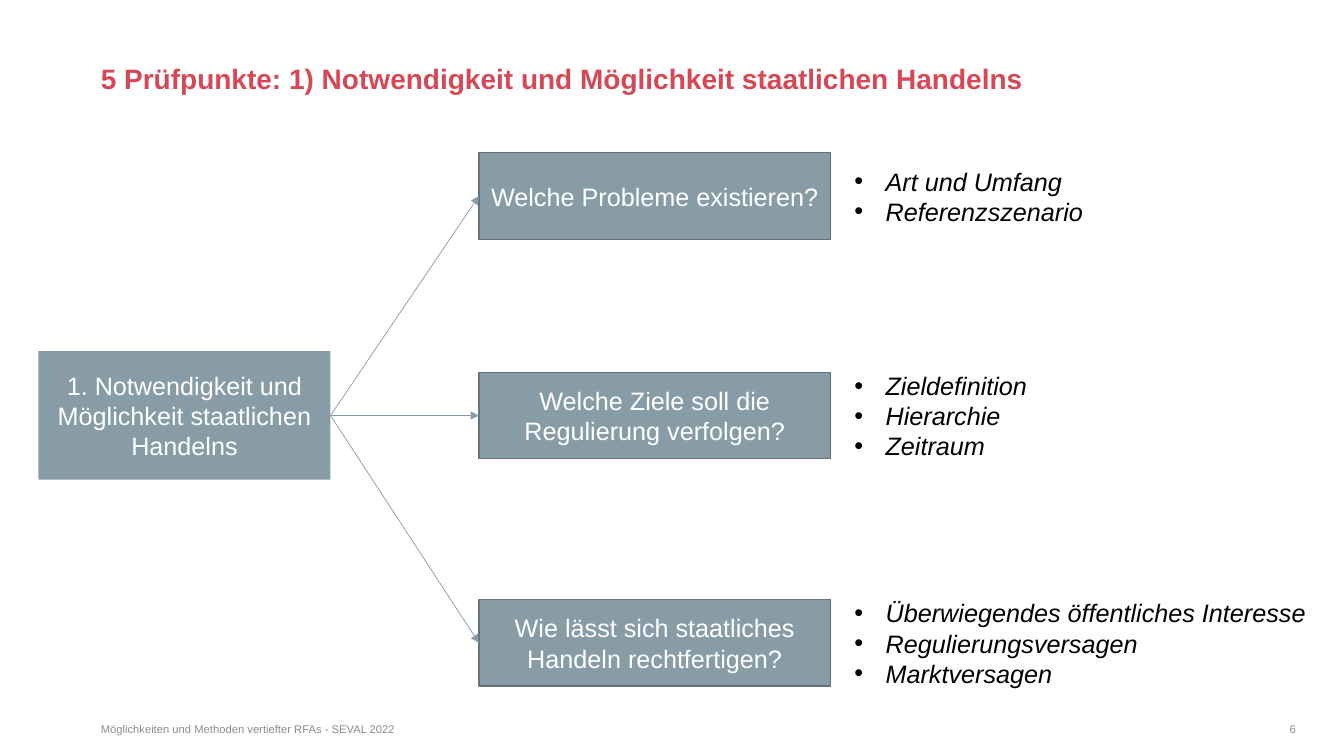
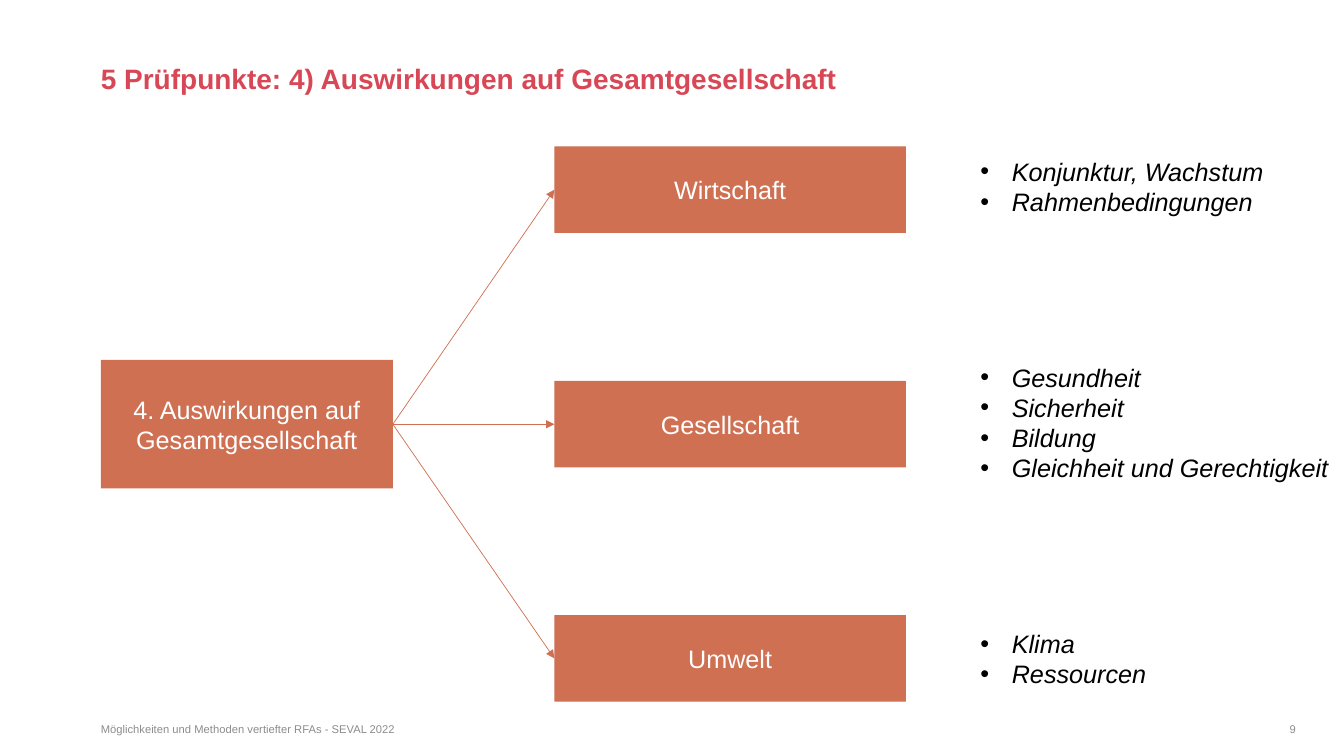
from lxml import etree
from pptx import Presentation
from pptx.dml.color import RGBColor
from pptx.enum import shapes, text
from pptx.oxml import ns
from pptx.util import Cm, Pt

FONT = "Arial"
RED, GREY, WHITE, BLACK = "D84755", "8C8C8C", "FFFFFF", "000000"
SLATE, EDGE, RUST = "879CA6", "64737B", "CF7053"
WIDE, HIGH = 33.87, 19.05
LEFT, RIGHT = 2.54, 32.66
FOOTER = "Möglichkeiten und Methoden vertiefter RFAs - SEVAL 2022"
ROOT = 7.36, 3.24
BOX = 8.86, 2.18
LINE, PAD, DENT = 0.76, 0.25, 0.79


def color(code):
    """Turn a hex string into a colour."""
    return RGBColor.from_string(code)


def child(parent, tag, **attrs):
    """Append a drawing element to its parent."""
    return etree.SubElement(parent, ns.qn(tag), attrs)


def dot(para):
    """Give a paragraph a hanging round bullet."""
    props = para._p.get_or_add_pPr()
    props.set("marL", str(Cm(DENT)))
    props.set("indent", str(-Cm(DENT)))
    child(props, "a:buFont", typeface=FONT)
    child(props, "a:buChar", char="•")


def write(frame, lines, size=18, ink=BLACK, bold=False, slant=False,
          align="LEFT", anchor="TOP", space=1.0, inset=PAD, bullet=False):
    """Fill a text frame with formatted lines."""
    frame.word_wrap = True
    frame.vertical_anchor = getattr(text.MSO_ANCHOR, anchor)
    frame.margin_left = frame.margin_right = Cm(inset)
    frame.margin_top = frame.margin_bottom = Cm(inset / 2)
    for i, line in enumerate(lines):
        para = frame.add_paragraph() if i else frame.paragraphs[0]
        if bullet:
            dot(para)
        para.alignment = getattr(text.PP_ALIGN, align)
        para.line_spacing = space
        run = para.add_run()
        run.text = line
        font = run.font
        font.name, font.size = FONT, Pt(size)
        font.bold, font.italic = bold, slant
        font.color.rgb = color(ink)


def label(slide, left, top, width, height, lines, **style):
    """Add a text box."""
    area = slide.shapes.add_textbox(Cm(left), Cm(top), Cm(width), Cm(height))
    write(area.text_frame, lines, **style)


def box(slide, left, mid, size, words, fill, edge=None):
    """Add a filled box centred on a height."""
    width, height = size
    shape = slide.shapes.add_shape(
        shapes.MSO_SHAPE.RECTANGLE, Cm(left), Cm(mid - height / 2),
        Cm(width), Cm(height))
    shape.shadow.inherit = False
    shape.fill.solid()
    shape.fill.fore_color.rgb = color(fill)
    if edge:
        shape.line.color.rgb = color(edge)
        shape.line.width = Pt(1)
    else:
        shape.line.fill.background()
    write(shape.text_frame, [words], ink=WHITE, align="CENTER",
          anchor="MIDDLE")
    return shape


def arrow(slide, start, end, ink):
    """Link the right side of one box to the left side of another."""
    link = slide.shapes.add_connector(
        shapes.MSO_CONNECTOR.STRAIGHT, 0, 0, 0, 0)
    link.begin_connect(start, 3)
    link.end_connect(end, 1)
    link.line.color.rgb = color(ink)
    link.line.width = Pt(0.5)
    child(link.line._get_or_add_ln(), "a:tailEnd", type="triangle")
    child(link._element.spPr, "a:effectLst")


def points(slide, left, mid, items):
    """Add a bullet list centred on a height."""
    height = PAD + LINE * len(items)
    label(slide, left, mid - height / 2, WIDE - left, height, items,
          slant=True, bullet=True)


def page(deck, title, number):
    """Start a slide with its title and footer."""
    slide = deck.slides.add_slide(deck.slide_layouts[6])
    label(slide, LEFT, 1.65, RIGHT - LEFT, 2.18, [title], size=20, ink=RED,
          bold=True, space=0.9, inset=0)
    small = dict(size=8, ink=GREY, inset=0)
    label(slide, LEFT, 18.21, 11.43, 0.66, [FOOTER], **small)
    label(slide, RIGHT - 8.2, 18.21, 8.2, 0.66, [str(number)],
          align="RIGHT", **small)
    return slide


def tree(slide, root, cols, mid, rows, fill, edge=None):
    """Draw a root box with arrows to boxes and their lists."""
    first, second, third = cols
    stem = box(slide, first, mid, ROOT, root, fill)
    for high, aim, words, items in rows:
        leaf = box(slide, second, high, BOX, words, fill, edge)
        arrow(slide, stem, leaf, fill)
        points(slide, third, aim, items)


def main():
    """Build and save the deck."""
    deck = Presentation()
    deck.slide_width, deck.slide_height = Cm(WIDE), Cm(HIGH)

    need = page(deck, "5 Prüfpunkte: 1) Notwendigkeit und Möglichkeit "
                "staatlichen Handelns", 6)
    tree(need, "1. Notwendigkeit und Möglichkeit staatlichen Handelns",
         (0.97, 12.07, 21.28), 10.47, [
             (4.94, 4.94, "Welche Probleme existieren?",
              ["Art und Umfang", "Referenzszenario"]),
             (10.47, 10.47, "Welche Ziele soll die Regulierung verfolgen?",
              ["Zieldefinition", "Hierarchie", "Zeitraum"]),
             (16.2, 16.2,
              "Wie lässt sich staatliches Handeln rechtfertigen?",
              ["Überwiegendes öffentliches Interesse",
               "Regulierungsversagen", "Marktversagen"]),
         ], SLATE, EDGE)

    impact = page(deck, "5 Prüfpunkte: 4) Auswirkungen auf "
                  "Gesamtgesellschaft", 9)
    tree(impact, "4. Auswirkungen auf Gesamtgesellschaft",
         (LEFT, 13.97, 24.46), 10.69, [
             (4.78, 4.69, "Wirtschaft",
              ["Konjunktur, Wachstum", "Rahmenbedingungen"]),
             (10.69, 10.64, "Gesellschaft",
              ["Gesundheit", "Sicherheit", "Bildung",
               "Gleichheit und Gerechtigkeit"]),
             (16.59, 16.59, "Umwelt", ["Klima", "Ressourcen"]),
         ], RUST)

    deck.save("out.pptx")


if __name__ == "__main__":
    main()
